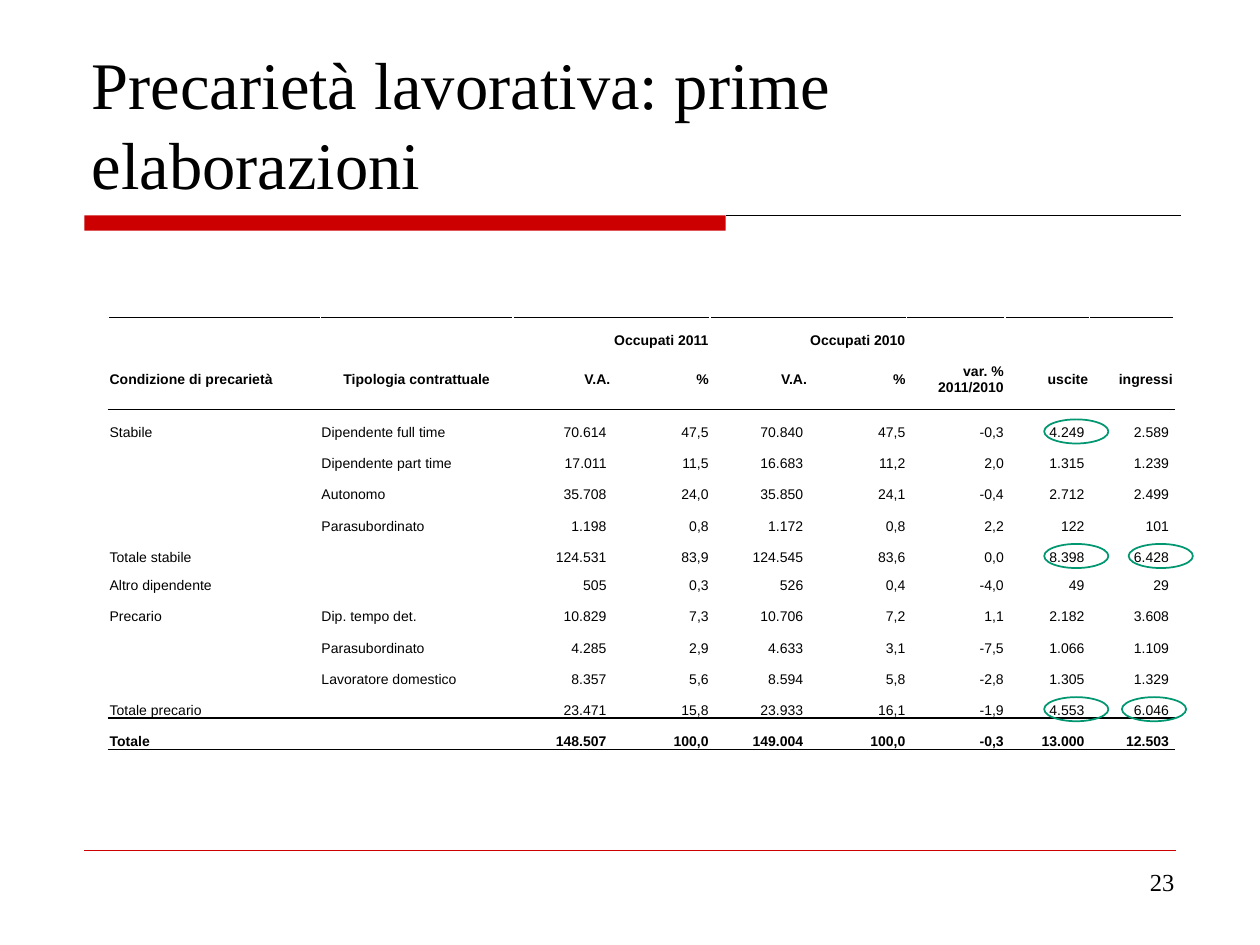
from itertools import accumulate, product

from lxml.etree import SubElement
from pptx import Presentation
from pptx.dml.color import RGBColor
from pptx.enum.shapes import MSO_CONNECTOR, MSO_SHAPE
from pptx.enum.text import MSO_ANCHOR as ANCHOR, PP_ALIGN as ALIGN
from pptx.oxml.ns import qn
from pptx.util import Inches, Pt

COLORS = {"black": "000000", "white": "FFFFFF", "red": "CC0000", "green": "009771"}
W, H = Inches(10), Inches(7.5)

COLS = [1.68, 1.53] + [0.78] * 5 + [0.67] * 2
ROWS = [0.25, 0.49] + [0.25] * 5 + [0.23] + [0.25] * 5
COUNT_COLS = (2, 4, 7, 8)
RULED_BELOW = (-1, 1, 11, 12)
BOLD_ROWS = (0, 1, 12)
DATA = [
    ["", "", "Occupati 2011", "", "Occupati 2010", "", "", "", ""],
    ["Condizione di precarietà", "Tipologia contrattuale", "V.A.", "%", "V.A.", "%",
     "var. % 2011/2010", "uscite", "ingressi"],
    ["Stabile", "Dipendente full time", "70.614", "47,5", "70.840", "47,5", "-0,3", "4.249", "2.589"],
    ["", "Dipendente part time", "17.011", "11,5", "16.683", "11,2", "2,0", "1.315", "1.239"],
    ["", "Autonomo", "35.708", "24,0", "35.850", "24,1", "-0,4", "2.712", "2.499"],
    ["", "Parasubordinato", "1.198", "0,8", "1.172", "0,8", "2,2", "122", "101"],
    ["Totale stabile", "", "124.531", "83,9", "124.545", "83,6", "0,0", "8.398", "6.428"],
    ["Altro dipendente", "", "505", "0,3", "526", "0,4", "-4,0", "49", "29"],
    ["Precario", "Dip. tempo det.", "10.829", "7,3", "10.706", "7,2", "1,1", "2.182", "3.608"],
    ["", "Parasubordinato", "4.285", "2,9", "4.633", "3,1", "-7,5", "1.066", "1.109"],
    ["", "Lavoratore domestico", "8.357", "5,6", "8.594", "5,8", "-2,8", "1.305", "1.329"],
    ["Totale precario", "", "23.471", "15,8", "23.933", "16,1", "-1,9", "4.553", "6.046"],
    ["Totale", "", "148.507", "100,0", "149.004", "100,0", "-0,3", "13.000", "12.503"],
]
# row, column, shift to the right as a share of the column
MARKS = [(2, 7, 0.34), (6, 7, 0.34), (6, 8, 0.34), (11, 7, 0.34), (11, 8, 0.26)]


def rgb(name):
    return RGBColor.from_string(COLORS[name])


def area(x, y, w, h):
    """Turn percentages of the slide into a box."""
    return [round(v * full / 100) for v, full in zip((x, y, w, h), (W, H, W, H))]


def write(p, text, font, size, align, bold=False):
    p.alignment = align
    r = p.add_run()
    r.text = text
    for key, value in {"name": font, "size": Pt(size), "bold": bold}.items():
        setattr(r.font, key, value)
    r.font.color.rgb = rgb("black")


def add_text(s, box, text, size, align, anchor):
    tf = s.shapes.add_textbox(*box).text_frame
    tf.word_wrap = True
    tf.vertical_anchor = anchor
    write(tf.paragraphs[0], text, "Times New Roman", size, align)


def add_rule(s, x1, x2, y, color, width):
    line = s.shapes.add_connector(MSO_CONNECTOR.STRAIGHT, x1, y, x2, y)
    line.line.color.rgb = rgb(color)
    line.line.width = Pt(width)
    SubElement(line._element.spPr, qn("a:effectLst"))


def add_title_bar(s, box):
    x, y, w, h = box
    bar = s.shapes.add_shape(MSO_SHAPE.RECTANGLE, x, y, round(w * 0.585), h)
    bar.shadow.inherit = False
    bar.fill.solid()
    bar.fill.fore_color.rgb = rgb("red")
    bar.line.fill.background()
    add_rule(s, x + bar.width, x + w, y, "black", 0.75)


def set_borders(cell, row):
    top = "black" if row - 1 in RULED_BELOW else "white"
    bottom = "black" if row in RULED_BELOW else "white"
    for side, color in zip("LRTB", ("white", "white", top, bottom)):
        ln = SubElement(cell._tc.get_or_add_tcPr(), qn(f"a:ln{side}"), w=str(Pt(1)))
        SubElement(SubElement(ln, qn("a:solidFill")), qn("a:srgbClr"), val=COLORS[color])


def fill_cell(cell, row, col):
    set_borders(cell, row)
    cell.fill.background()
    inset = 0.04 if row > 1 and col in COUNT_COLS else 0.01
    margins = {"left": 0.01, "top": 0.01, "right": inset, "bottom": 0}
    for side, value in margins.items():
        setattr(cell, f"margin_{side}", Inches(value))
    cell.vertical_anchor = ANCHOR.MIDDLE if row == 1 else ANCHOR.BOTTOM
    p = cell.text_frame.paragraphs[0]
    align = ALIGN.RIGHT if col > 1 else ALIGN.CENTER if (row, col) == (1, 1) else ALIGN.LEFT
    if DATA[row][col]:
        write(p, DATA[row][col], "Arial", 8, align, row in BOLD_ROWS)
    else:
        SubElement(p._p, qn("a:endParaRPr"), sz="800")


def add_data_table(s, box, widths, heights):
    table = s.shapes.add_table(len(ROWS), len(COLS), *box).table
    table.first_row = table.horz_banding = False
    for column, width in zip(table.columns, widths):
        column.width = width
    for line, height in zip(table.rows, heights):
        line.height = height
    for col in (2, 4):
        table.cell(0, col).merge(table.cell(0, col + 1))
    for row, col in product(range(len(ROWS)), range(len(COLS))):
        fill_cell(table.cell(row, col), row, col)


def add_marks(s, box, widths, heights):
    """Ring the highlighted counts, placed from the table's cells."""
    lefts = list(accumulate(widths, initial=box[0]))
    tops = list(accumulate(heights, initial=box[1]))
    _, _, w, h = area(0, 0, 5.1, 2.55)
    for row, col, shift in MARKS:
        x = lefts[col] + widths[col] * (0.5 + shift) - w / 2
        y = tops[row] + heights[row] * 0.7 - h / 2
        ring = s.shapes.add_shape(MSO_SHAPE.OVAL, round(x), round(y), w, h)
        ring.shadow.inherit = False
        ring.fill.background()
        ring.line.color.rgb = rgb("green")
        ring.line.width = Pt(1)


def add_table_region(s, box):
    widths = [round(box[2] * c / sum(COLS)) for c in COLS]
    heights = [round(box[3] * r / sum(ROWS)) for r in ROWS]
    add_data_table(s, box, widths, heights)
    add_marks(s, box, widths, heights)


def add_footer(s, box):
    x, y, w, h = box
    add_rule(s, x, x + w, y, "red", 0.25)
    number_w = round(w * 0.17)
    number_box = (x + w - number_w + Inches(0.09), y + Inches(0.08), number_w, h)
    add_text(s, number_box, "23", 14, ALIGN.RIGHT, ANCHOR.TOP)


def main():
    prs = Presentation()
    prs.slide_width, prs.slide_height = W, H
    s = prs.slides.add_slide(prs.slide_layouts[6])
    add_title_bar(s, area(6.7, 22.8, 87, 1.6))
    add_text(s, area(6.3, 3.87, 87.5, 18.27), "Precarietà lavorativa: prime elaborazioni",
             38, ALIGN.LEFT, ANCHOR.BOTTOM)
    add_table_region(s, area(8.6, 33.6, 84.6, 45.73))
    add_footer(s, area(6.7, 90, 86.6, 6.93))
    prs.save("out.pptx")


if __name__ == "__main__":
    main()
